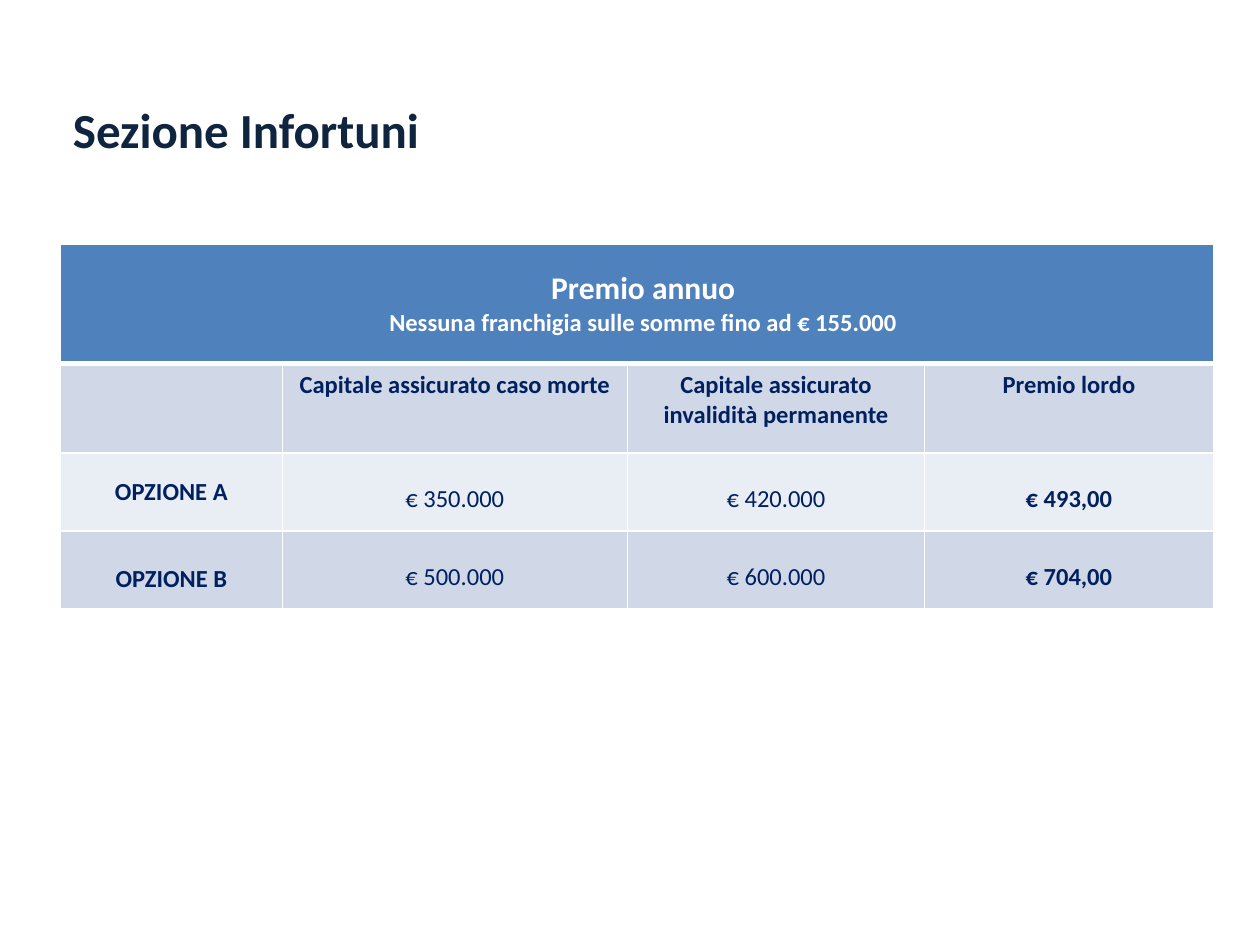
from lxml.etree import SubElement as Sub
from pptx import Presentation
from pptx.dml.color import RGBColor as RGB
from pptx.enum.text import MSO_ANCHOR as Anchor, PP_ALIGN as Align
from pptx.oxml.ns import qn
from pptx.util import Cm, Pt

INK = RGB(0x0F, 0x24, 0x3E)
NAVY = RGB(0x00, 0x20, 0x60)
WHITE = RGB(0xFF, 0xFF, 0xFF)
BLUE = RGB(0x4F, 0x81, 0xBD)
MID = RGB(0xD0, 0xD8, 0xE8)
PALE = RGB(0xE9, 0xED, 0xF4)

COLS = [4.47, 6.96, 5.99, 5.82]
HEIGHTS = [2.4, 1.8, 1.57, 1.57]
FILLS = [BLUE, MID, PALE, MID]
HEADS = ["", "Capitale assicurato caso morte",
         "Capitale assicurato invalidità permanente", "Premio lordo"]
OPTIONS = [["OPZIONE A", "€ 350.000", "€ 420.000", "€ 493,00"],
           ["OPZIONE B", "€ 500.000", "€ 600.000", "€ 704,00"]]


def write(par, text, size=14, color=NAVY, bold=True, align=Align.CENTER):
    par.alignment = align
    run = par.add_run()
    run.text = text
    font = run.font
    font.name, font.size, font.bold = "Calibri", Pt(size), bold
    font.color.rgb = color


def edge(cell, side, width):
    line = Sub(cell._tc.get_or_add_tcPr(), qn("a:ln" + side), w=str(Pt(width)))
    fill = Sub(line, qn("a:solidFill"))
    Sub(fill, qn("a:srgbClr"), val=str(WHITE))


def style(cell, row):
    # The rule under the banner is thicker than the rest
    for side in "LRTB":
        thick = (row, side) in ((0, "B"), (1, "T"))
        edge(cell, side, 3 if thick else 1)
    cell.fill.solid()
    cell.fill.fore_color.rgb = FILLS[row]


def title(slide, left, top, width, height):
    box = slide.shapes.add_textbox(Cm(left), Cm(top), Cm(width), Cm(height))
    box.text_frame.word_wrap = True
    write(box.text_frame.paragraphs[0], "Sezione Infortuni",
          size=28, color=INK, align=Align.JUSTIFY)


def prices(slide, left, top):
    frame = slide.shapes.add_table(
        len(HEIGHTS), len(COLS), Cm(left), Cm(top),
        Cm(sum(COLS)), Cm(sum(HEIGHTS)))
    table = frame.table
    table.horz_banding = False
    for col, width in zip(table.columns, COLS):
        col.width = Cm(width)
    for r, height in enumerate(HEIGHTS):
        table.rows[r].height = Cm(height)
        for c in range(len(COLS)):
            style(table.cell(r, c), r)

    # Banner across all columns
    banner = table.cell(0, 0)
    banner.merge(table.cell(0, len(COLS) - 1))
    banner.margin_top = Cm(0.5)
    banner.margin_right = banner.margin_bottom = 0
    text = banner.text_frame
    write(text.paragraphs[0], "Premio annuo", size=18, color=WHITE)
    write(text.add_paragraph(),
          "Nessuna franchigia sulle somme fino ad € 155.000", color=WHITE)

    # Column heads
    for c, head in enumerate(HEADS):
        if head:
            write(table.cell(1, c).text_frame.paragraphs[0], head)

    # Options: the name and the premium are bold
    for r, option in enumerate(OPTIONS, 2):
        for c, value in enumerate(option):
            cell = table.cell(r, c)
            cell.vertical_anchor = Anchor.MIDDLE
            if c:
                cell.margin_top, cell.margin_bottom = Cm(0.3), 0
            elif r == 3:
                cell.margin_top = Cm(0.5)
            write(cell.text_frame.paragraphs[0], value, bold=c in (0, 3))


def main():
    deck = Presentation()
    deck.slide_width, deck.slide_height = Cm(25.4), Cm(19.05)
    slide = deck.slides.add_slide(deck.slide_layouts[6])
    title(slide, 1.22, 1.88, 14.2, 1.45)
    prices(slide, 1.22, 4.93)
    deck.save("out.pptx")


if __name__ == "__main__":
    main()
